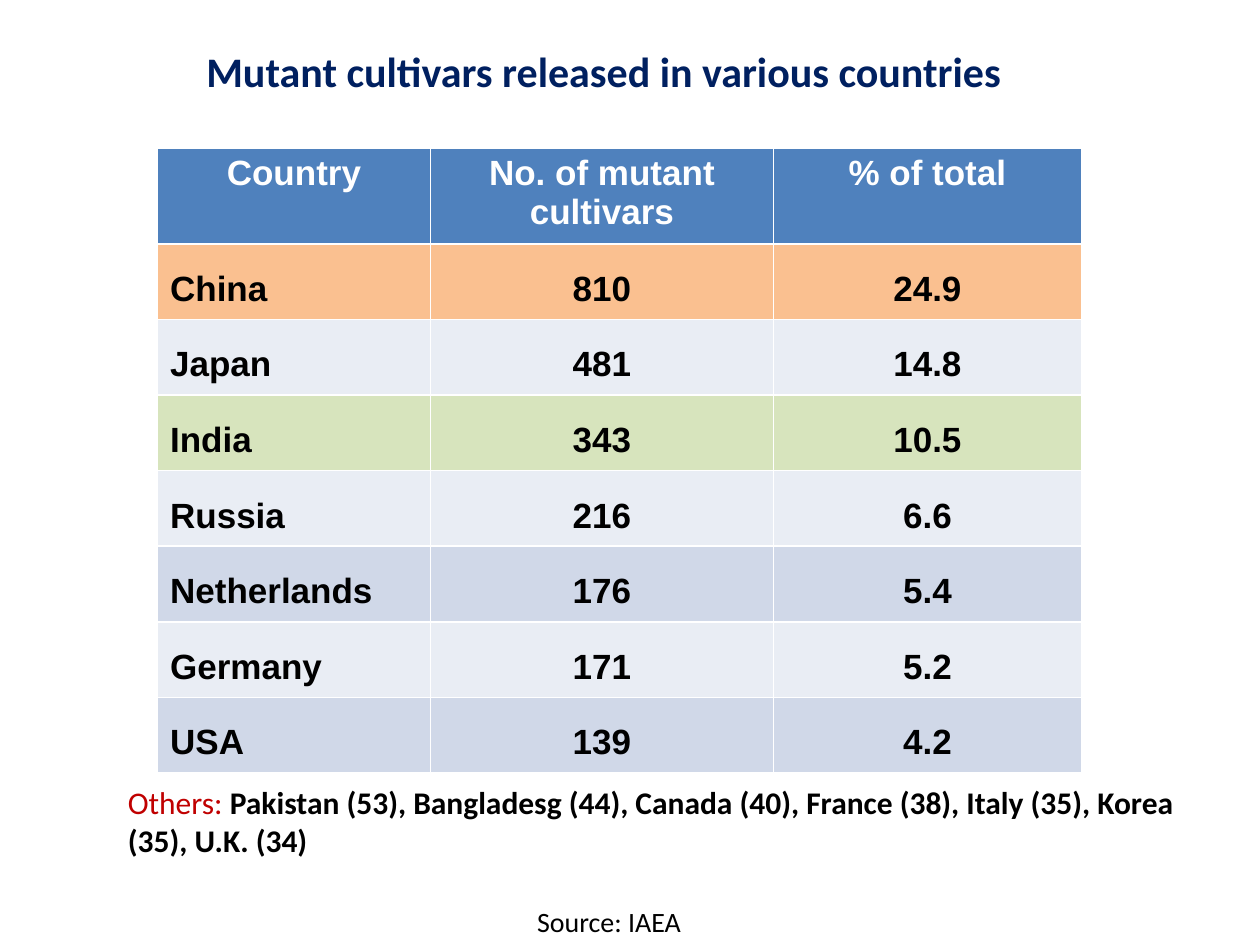
"""Build a slide listing mutant cultivars released by country."""
import dataclasses
import typing

import pptx
import pptx.dml.color
import pptx.enum.text
import pptx.util

Pt = pptx.util.Pt
RGBColor = pptx.dml.color.RGBColor
PP_ALIGN = pptx.enum.text.PP_ALIGN

NAVY = RGBColor(0x00, 0x20, 0x60)
RED = RGBColor(0xC0, 0x00, 0x00)
BLACK = RGBColor(0x00, 0x00, 0x00)
WHITE = RGBColor(0xFF, 0xFF, 0xFF)
BLUE = RGBColor(0x4F, 0x81, 0xBD)
ORANGE = RGBColor(0xFA, 0xC0, 0x90)
GREEN = RGBColor(0xD7, 0xE4, 0xBD)
LIGHT_BAND = RGBColor(0xE9, 0xED, 0xF4)
DARK_BAND = RGBColor(0xD0, 0xD8, 0xE8)

HEADER_HEIGHT = 54.8
ROW_HEIGHT = 43.2
COLUMN_WIDTHS = (156, 196, 176)
HEADINGS = ("Country", "No. of mutant cultivars", "% of total")


@dataclasses.dataclass(frozen=True)
class Country:
    name: str
    cultivars: str
    percent: str
    fill: RGBColor


@dataclasses.dataclass(frozen=True)
class Span:
    text: str
    color: RGBColor
    bold: bool = False


@dataclasses.dataclass(frozen=True)
class Caption:
    left: float
    top: float
    width: float
    height: float
    size: float
    align: PP_ALIGN
    spans: tuple[Span, ...]


COUNTRIES = (
    Country("China", "810", "24.9", ORANGE),
    Country("Japan", "481", "14.8", LIGHT_BAND),
    Country("India", "343", "10.5", GREEN),
    Country("Russia", "216", "6.6", LIGHT_BAND),
    Country("Netherlands", "176", "5.4", DARK_BAND),
    Country("Germany", "171", "5.2", LIGHT_BAND),
    Country("USA", "139", "4.2", DARK_BAND),
)

CAPTIONS = (
    Caption(45, 22.5, 600, 36.5, 24, PP_ALIGN.CENTER, (
        Span("Mutant cultivars released in various countries", NAVY, True),)),
    Caption(66, 444, 624, 51, 18, PP_ALIGN.LEFT, (
        Span("Others: ", RED),
        Span("Pakistan (53), Bangladesg (44), Canada (40), France (38), "
             "Italy (35), Korea (35), U.K. (34)", BLACK, True))),
    Caption(234, 513.3, 228, 26.7, 16, PP_ALIGN.CENTER, (
        Span("Source: IAEA", BLACK),)),
)


def format_run(r: typing.Any, font: str, size: float, color: RGBColor, bold: bool) -> None:
    r.font.name = font
    r.font.size = Pt(size)
    r.font.color.rgb = color
    r.font.bold = bold


def add_caption(s: typing.Any, caption: Caption) -> None:
    sp = s.shapes.add_textbox(
        Pt(caption.left), Pt(caption.top), Pt(caption.width), Pt(caption.height))
    tf = sp.text_frame
    tf.word_wrap = True
    tf.auto_size = pptx.enum.text.MSO_AUTO_SIZE.SHAPE_TO_FIT_TEXT
    p = tf.paragraphs[0]
    p.alignment = caption.align
    for span in caption.spans:
        r = p.add_run()
        r.text = span.text
        format_run(r, "Calibri", caption.size, span.color, span.bold)


def fill_cell(cell: typing.Any, text: str, fill: RGBColor, color: RGBColor,
              align: PP_ALIGN, spacing: float) -> None:
    cell.fill.solid()
    cell.fill.fore_color.rgb = fill
    p = cell.text_frame.paragraphs[0]
    p.text = text
    p.alignment = align
    p.line_spacing = spacing
    format_run(p.runs[0], "Arial", 20, color, True)


def add_country_table(s: typing.Any) -> None:
    height = HEADER_HEIGHT + ROW_HEIGHT * len(COUNTRIES)
    table = s.shapes.add_table(
        len(COUNTRIES) + 1, len(HEADINGS),
        Pt(90), Pt(84.5), Pt(sum(COLUMN_WIDTHS)), Pt(height)).table
    for column, width in zip(table.columns, COLUMN_WIDTHS):
        column.width = Pt(width)
    for i, row in enumerate(table.rows):
        row.height = Pt(ROW_HEIGHT if i else HEADER_HEIGHT)
    for j, heading in enumerate(HEADINGS):
        fill_cell(table.cell(0, j), heading, BLUE, WHITE, PP_ALIGN.CENTER, 1.0)
    for i, country in enumerate(COUNTRIES, start=1):
        values = (country.name, country.cultivars, country.percent)
        for j, value in enumerate(values):
            align = PP_ALIGN.CENTER if j else PP_ALIGN.LEFT
            fill_cell(table.cell(i, j), value, country.fill, BLACK, align, 1.5)


def main() -> None:
    prs = pptx.Presentation()
    prs.slide_width, prs.slide_height = Pt(720), Pt(540)
    s = prs.slides.add_slide(prs.slide_layouts[6])
    add_country_table(s)
    for caption in CAPTIONS:
        add_caption(s, caption)
    prs.save("out.pptx")


if __name__ == "__main__":
    main()
